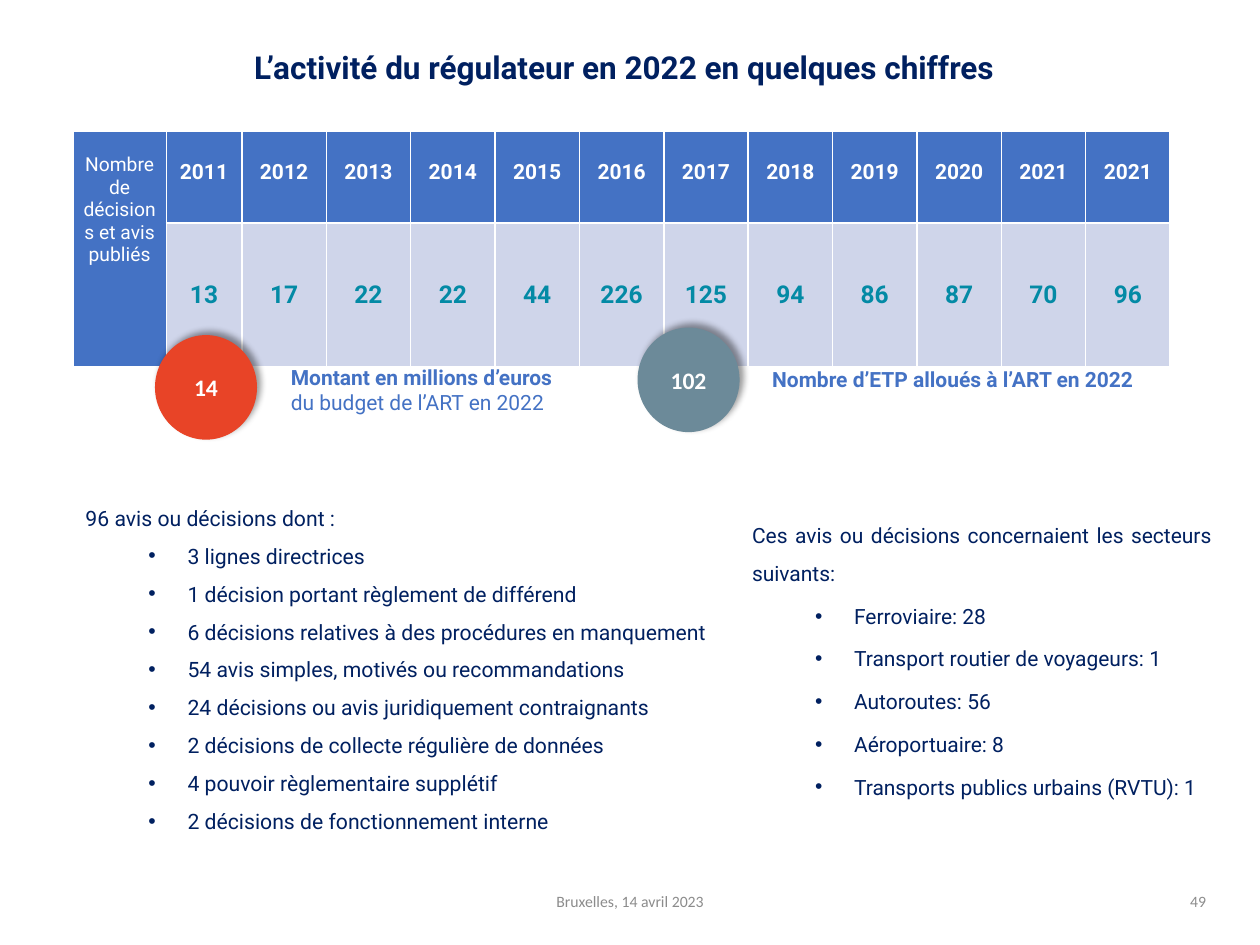
from dataclasses import dataclass

from lxml import etree
from pptx import Presentation
from pptx.dml.color import RGBColor
from pptx.enum.shapes import MSO_SHAPE
from pptx.enum.text import MSO_ANCHOR, MSO_AUTO_SIZE, PP_ALIGN
from pptx.oxml import parse_xml
from pptx.oxml.ns import nsdecls, qn
from pptx.util import Inches, Pt

OVAL = MSO_SHAPE.OVAL
TOP, MIDDLE = MSO_ANCHOR.TOP, MSO_ANCHOR.MIDDLE
LEFT, CENTER = PP_ALIGN.LEFT, PP_ALIGN.CENTER
RIGHT, JUSTIFY = PP_ALIGN.RIGHT, PP_ALIGN.JUSTIFY
COLORS = {
    "navy": "002060", "blue": "4472C4", "pale": "CFD5EA", "teal": "038AA5",
    "red": "E84427", "slate": "6C8A99", "grey": "8C8C8C", "white": "FFFFFF",
}
YEARS = ["2011", "2012", "2013", "2014", "2015", "2016",
         "2017", "2018", "2019", "2020", "2021", "2021"]
COUNTS = ["13", "17", "22", "22", "44", "226",
          "125", "94", "86", "87", "70", "96"]


@dataclass
class Box:
    left: float
    top: float
    width: float
    height: float

    def emu(self) -> list:
        return [Inches(n) for n in (self.left, self.top, self.width, self.height)]


@dataclass
class Font:
    size: float
    color: str
    bold: bool = False
    name: str = "Roboto"


@dataclass
class Badge:
    text: str
    color: str
    box: Box


@dataclass
class Label:
    text: str
    box: Box
    font: Font
    align: PP_ALIGN = LEFT
    low: float = 0.05


@dataclass
class Panel:
    intro: str
    items: list
    box: Box
    size: float
    pitch: float


BADGES = [
    Badge("14", "red", Box(1.23, 2.66, 0.81, 0.83)),
    Badge("102", "slate", Box(5.06, 2.6, 0.81, 0.83)),
]
FACT = Font(12, "blue", True)
NOTE = Font(9, "grey", name="Calibri")
BUDGET = Label("Montant en millions d’euros\vdu budget de l’ART en 2022",
               Box(2.21, 2.5, 2.4, 1.18), FACT)
LABELS = [
    Label("Nombre d’ETP alloués à l’ART en 2022",
          Box(6.03, 2.34, 3.2, 1.51), FACT, low=0.22),
    Label("Bruxelles, 14 avril 2023", Box(3.31, 6.95, 3.38, 0.4), NOTE, CENTER),
    Label("49", Box(7.42, 6.95, 2.25, 0.4), NOTE, RIGHT),
]
PANELS = [
    Panel("96 avis ou décisions dont :", [
        "3 lignes directrices",
        "1 décision portant règlement de différend",
        "6 décisions relatives à des procédures en manquement",
        "54 avis simples, motivés ou recommandations",
        "24 décisions ou avis juridiquement contraignants",
        "2 décisions de collecte régulière de données",
        "4 pouvoir règlementaire supplétif",
        "2 décisions de fonctionnement interne",
    ], Box(0.58, 3.9, 5.18, 3.6), 12.1, 1.3),
    Panel("Ces avis ou décisions concernaient les secteurs suivants:", [
        "Ferroviaire: 28",
        "Transport routier de voyageurs: 1",
        "Autoroutes: 56",
        "Aéroportuaire: 8",
        "Transports publics urbains (RVTU): 1",
    ], Box(5.87, 4, 3.85, 2.56), 12, 1.5),
]


def paint(fill, color: str) -> None:
    fill.solid()
    fill.fore_color.rgb = RGBColor.from_string(COLORS[color])


def style(para, font: Font, align: PP_ALIGN) -> None:
    para.alignment = align
    for run in para.runs:
        run.font.name = font.name
        run.font.size = Pt(font.size)
        run.font.bold = font.bold
        run.font.color.rgb = RGBColor.from_string(COLORS[font.color])


def write(frame, text: str, font: Font, align: PP_ALIGN) -> None:
    frame.text = text
    frame.word_wrap = True
    for para in frame.paragraphs:
        style(para, font, align)


def add_title(slide) -> None:
    title = slide.shapes.title
    title.left, title.top, title.width, title.height = Box(1.63, 0.39, 6.65, 0.42).emu()
    frame = title.text_frame
    write(frame, "L’activité du régulateur en 2022 en quelques chiffres",
          Font(18, "navy", True), CENTER)
    frame.auto_size = MSO_AUTO_SIZE.NONE
    frame.vertical_anchor = TOP
    frame.margin_top = frame.margin_bottom = Inches(0.04)
    frame.paragraphs[0].line_spacing = 0.85


def fill_cell(cell, text: str, font: Font, color: str,
              anchor: MSO_ANCHOR, top: float) -> None:
    paint(cell.fill, color)
    cell.margin_left = cell.margin_right = Inches(0.07)
    cell.margin_top, cell.margin_bottom = Inches(top), Inches(0.04)
    cell.vertical_anchor = anchor
    write(cell.text_frame, text, font, CENTER)


def add_grid(slide) -> None:
    widths = [0.74, 0.6] + [0.67] * (len(YEARS) - 1)
    heights = [0.73, 1.14]
    box = Box(0.58, 1.04, sum(widths), sum(heights))
    table = slide.shapes.add_table(2, len(widths), *box.emu()).table
    for col, width in zip(table.columns, widths):
        col.width = Inches(width)
    for row, height in zip(table.rows, heights):
        row.height = Inches(height)
    head = table.cell(0, 0)
    head.merge(table.cell(1, 0))
    fill_cell(head, "Nombre de décisions et avis publiés",
              Font(11, "white"), "blue", TOP, 0.18)
    for col, (year, count) in enumerate(zip(YEARS, COUNTS), 1):
        fill_cell(table.cell(0, col), year, Font(12, "white", True), "blue", TOP, 0.23)
        fill_cell(table.cell(1, col), count, Font(14, "teal", True), "pale", MIDDLE, 0.04)


def add_badge(slide, badge: Badge) -> None:
    shape = slide.shapes.add_shape(OVAL, *badge.box.emu())
    paint(shape.fill, badge.color)
    shape.line.fill.background()
    shape.shadow.inherit = False
    glow = shape.element.spPr.find(qn("a:effectLst"))
    glow.append(parse_xml(
        f'<a:outerShdw {nsdecls("a")} blurRad="{Pt(4)}" dist="{Pt(3)}" '
        'dir="18900000" algn="bl" rotWithShape="0"><a:srgbClr val="000000">'
        '<a:alpha val="40000"/></a:srgbClr></a:outerShdw>'))
    shape.text_frame.vertical_anchor = MIDDLE
    write(shape.text_frame, badge.text, Font(13.5, "white", True, "Calibri"), CENTER)


def add_label(slide, label: Label):
    frame = slide.shapes.add_textbox(*label.box.emu()).text_frame
    frame.vertical_anchor = MIDDLE
    frame.margin_bottom = Inches(label.low)
    write(frame, label.text, label.font, label.align)
    return frame


def add_panel(slide, panel: Panel) -> None:
    frame = slide.shapes.add_textbox(*panel.box.emu()).text_frame
    write(frame, "\n".join([panel.intro, *panel.items]),
          Font(panel.size, "navy"), JUSTIFY)
    for rank, para in enumerate(frame.paragraphs):
        para.line_spacing = panel.pitch
        para.space_before = Pt(2.8)
        if rank:
            para.level = 1
            props = para._p.get_or_add_pPr()
            props.set("marL", str(Inches(0.81)))
            props.set("indent", str(Inches(-0.31)))
            etree.SubElement(props, qn("a:buFont"), typeface="Arial")
            etree.SubElement(props, qn("a:buChar"), char="•")


def main() -> None:
    deck = Presentation()
    deck.slide_width, deck.slide_height = Inches(10), Inches(7.5)
    slide = deck.slides.add_slide(deck.slide_layouts[5])
    add_title(slide)
    add_grid(slide)
    for badge in BADGES:
        add_badge(slide, badge)
    budget = add_label(slide, BUDGET)
    budget.paragraphs[0].runs[1].font.bold = False
    for label in LABELS:
        add_label(slide, label)
    for panel in PANELS:
        add_panel(slide, panel)
    deck.save("out.pptx")


if __name__ == "__main__":
    main()
